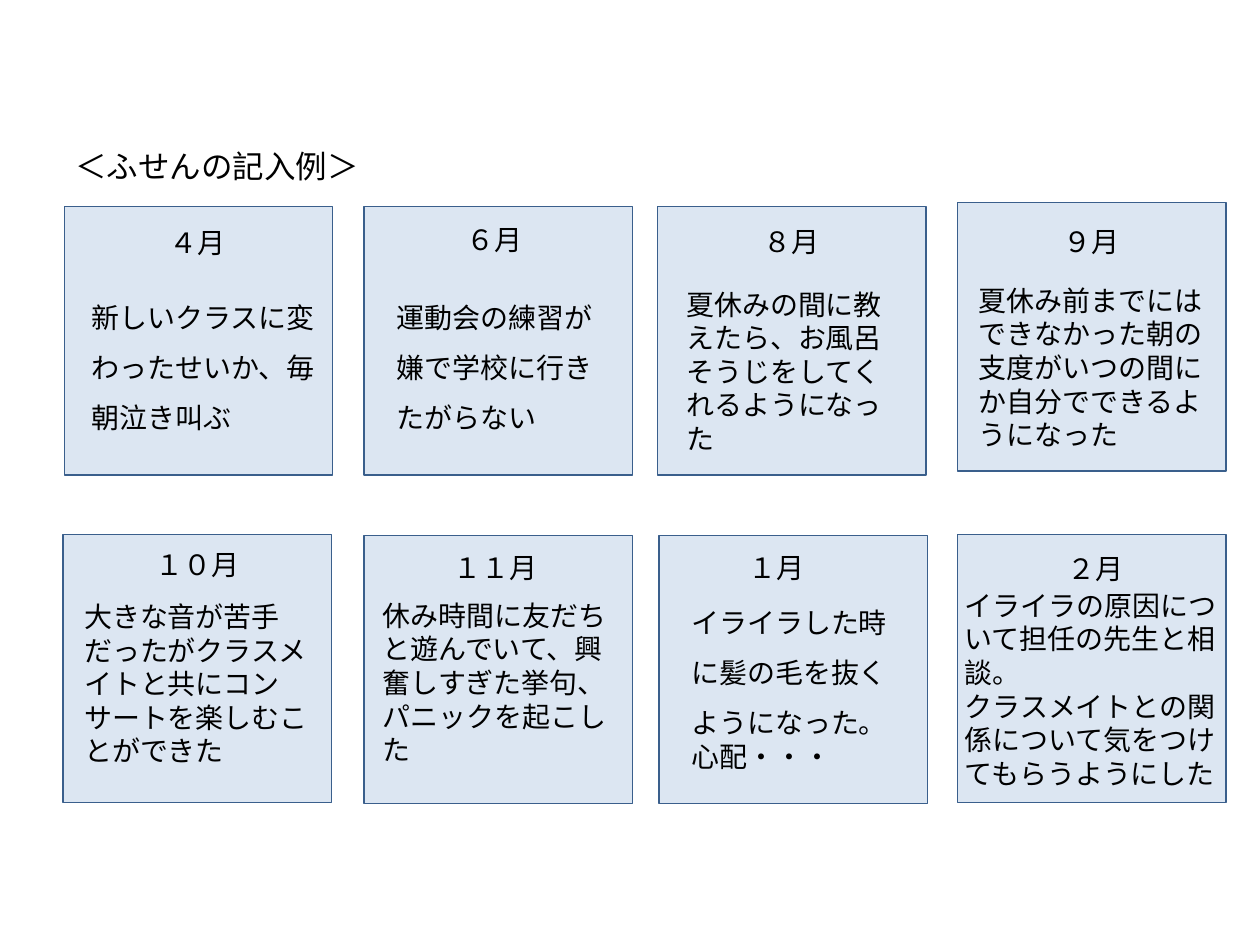
"""Build a slide of eight sticky-note examples, one for each month."""
from dataclasses import dataclass

from pptx import Presentation
from pptx.dml.color import RGBColor
from pptx.enum.shapes import MSO_SHAPE
from pptx.enum.text import MSO_ANCHOR, MSO_AUTO_SIZE, PP_ALIGN
from pptx.oxml.ns import qn
from pptx.util import Emu, Pt
from lxml.etree import SubElement


@dataclass(frozen=True)
class Theme:
    fill: RGBColor = RGBColor(0xDC, 0xE6, 0xF2)
    border: RGBColor = RGBColor(0x3A, 0x5F, 0x8C)
    ink: RGBColor = RGBColor(0, 0, 0)
    japanese: str = "Noto Sans CJK JP"
    latin: str = "Calibri"
    heading_size: int = 18
    note_size: int = 16
    border_width: float = 0.75


@dataclass(frozen=True)
class Note:
    month: str
    month_box: tuple
    body: tuple
    body_box: tuple
    nudge: tuple = (0, 0)
    spacing: float = 1.0
    month_align: PP_ALIGN = PP_ALIGN.CENTER
    month_centred: bool = False


THEME = Theme()
EMU_PER_PX = 9144
SLIDE = (1000, 750)
COLUMNS = (51, 289, 522, 760)
ROWS = (164, 425)
NOTE_SIDE = 213

HEADING = "＜ふせんの記入例＞"
HEADING_BOX = (50, 112, 315, 40)
NOTES = [
    Note("４月", (113, 174, 87, 37),
         ("新しいクラスに変わったせいか、毎朝泣き叫ぶ",),
         (63, 220, 198, 125), spacing=1.5),
    Note("６月", (349, 172, 87, 37),
         ("運動会の練習が嫌で学校に行きたがらない",),
         (305, 220, 181, 125), spacing=1.5),
    Note("８月", (585, 173, 87, 37),
         ("夏休みの間に教えたら、お風呂そうじをしてくれるようになった",),
         (535, 223, 195, 145)),
    Note("９月", (823, 173, 87, 37),
         ("夏休み前までにはできなかった朝の支度がいつの間にか自分でできるようになった",),
         (767, 220, 205, 145), nudge=(0, -3)),
    Note("１０月", (105, 430, 103, 37),
         ("大きな音が苦手だったがクラスメイトと共にコンサートを楽しむことができた",),
         (57, 471, 198, 145), nudge=(-1, -1)),
    Note("１１月", (350, 430, 97, 40),
         ("休み時間に友だちと遊んでいて、興奮しすぎた挙句、パニックを起こした",),
         (294, 470, 213, 145), month_align=PP_ALIGN.JUSTIFY, month_centred=True),
    Note("１月", (584, 430, 97, 40),
         ("イライラした時に髪の毛を抜くようになった。", "心配・・・"),
         (539, 462, 188, 158), nudge=(1, 0), spacing=1.5,
         month_align=PP_ALIGN.JUSTIFY, month_centred=True),
    Note("２月", (827, 431, 85, 40),
         ("イライラの原因について担任の先生と相談。",
          "クラスメイトとの関係について気をつけてもらうようにした"),
         (756, 462, 228, 172), nudge=(0, -1), month_centred=True),
]


def emu(*lengths):
    return [Emu(length * EMU_PER_PX) for length in lengths]


def add_card(slide, left, top):
    card = slide.shapes.add_shape(
        MSO_SHAPE.RECTANGLE, *emu(left, top, NOTE_SIDE, NOTE_SIDE))
    card.shadow.inherit = False
    card.fill.solid()
    card.fill.fore_color.rgb = THEME.fill
    card.line.color.rgb = THEME.border
    card.line.width = Pt(THEME.border_width)


def add_text(slide, box, lines, size, align=PP_ALIGN.LEFT, spacing=1.0, centred=False):
    frame = slide.shapes.add_textbox(*emu(*box)).text_frame
    frame.text = "\n".join(lines)
    frame.word_wrap = True
    if centred:
        frame.vertical_anchor = MSO_ANCHOR.MIDDLE
    else:
        frame.auto_size = MSO_AUTO_SIZE.SHAPE_TO_FIT_TEXT
    frame.paragraphs[0].line_spacing = spacing
    for paragraph in frame.paragraphs:
        paragraph.alignment = align
        for run in paragraph.runs:
            run.font.size = Pt(size)
            run.font.color.rgb = THEME.ink
            run.font.name = THEME.latin if centred else THEME.japanese
            east_asian = SubElement(run.font._element, qn("a:ea"))
            east_asian.set("typeface", THEME.japanese)


def main():
    deck = Presentation()
    deck.slide_width, deck.slide_height = emu(*SLIDE)
    slide = deck.slides.add_slide(deck.slide_layouts[6])
    add_text(slide, HEADING_BOX, [HEADING], THEME.heading_size)
    for index, note in enumerate(NOTES):
        row, column = divmod(index, len(COLUMNS))
        shift_x, shift_y = note.nudge
        add_card(slide, COLUMNS[column] + shift_x, ROWS[row] + shift_y)
        add_text(slide, note.month_box, [note.month], THEME.note_size,
                 align=note.month_align, centred=note.month_centred)
        add_text(slide, note.body_box, note.body, THEME.note_size, spacing=note.spacing)
    deck.save("out.pptx")


if __name__ == "__main__":
    main()
